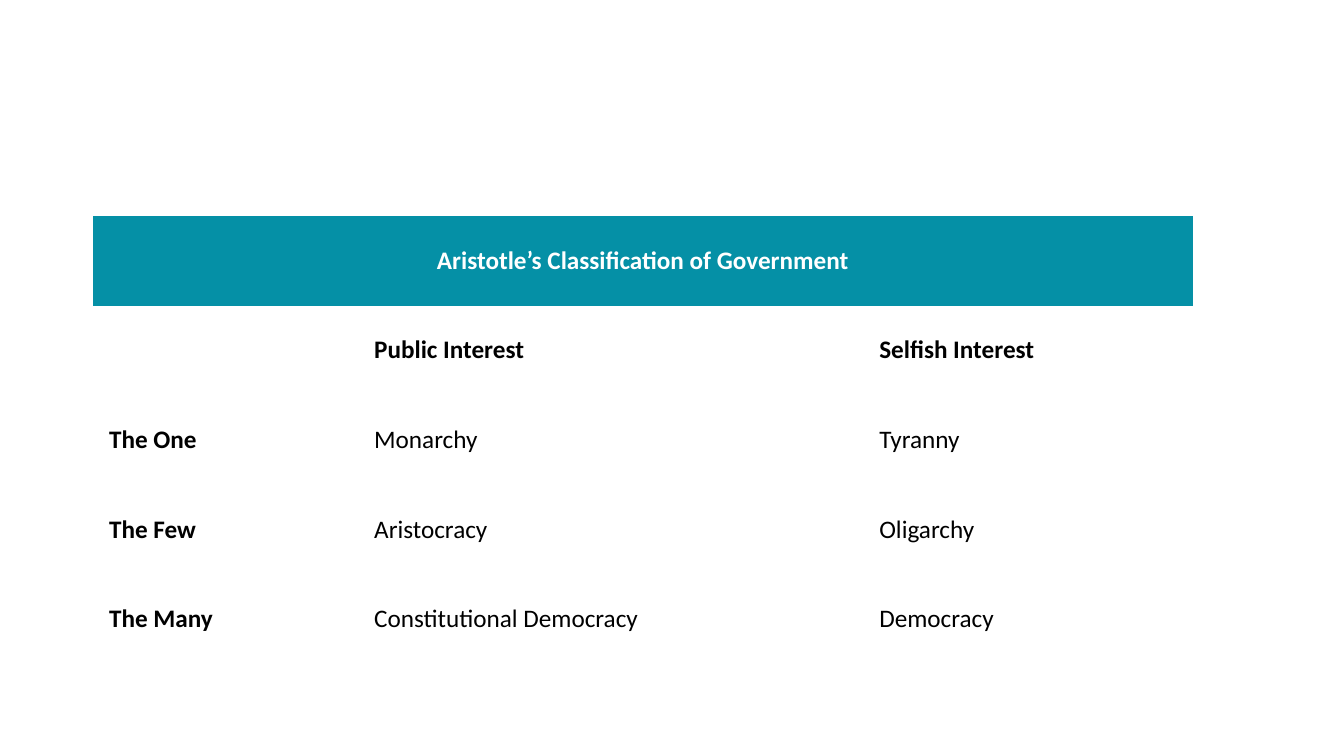
import pptx
import pptx.util
import pptx.dml.color
import pptx.enum.text
from pptx.util import Cm, Pt
from pptx.dml.color import RGBColor
from pptx.enum.text import MSO_ANCHOR, PP_ALIGN

TITLE = "Aristotle’s Classification of Government"
ROWS = [
    ("", "Public Interest", "Selfish Interest"),
    ("The One", "Monarchy", "Tyranny"),
    ("The Few", "Aristocracy", "Oligarchy"),
    ("The Many", "Constitutional Democracy", "Democracy"),
]

TEAL = RGBColor(0x05, 0x90, 0xA6)
WHITE = RGBColor(0xFF, 0xFF, 0xFF)
BLACK = RGBColor(0x00, 0x00, 0x00)
FONT, SIZE = "Calibri", Pt(18)
LEFT, TOP = Cm(2.34), Cm(5.44)
COL_WIDTHS = [Cm(6.68), Cm(12.73), Cm(8.31)]
ROW_HEIGHT = Cm(2.26)
MARGIN_X, MARGIN_Y = Cm(0.41), Cm(0.25)
NO_STYLE = "{2D5ABB26-0587-4C30-8999-92F81FD0307C}"


def write_cell(cell, text, color, bold, align=PP_ALIGN.LEFT):
    cell.vertical_anchor = MSO_ANCHOR.MIDDLE
    cell.margin_left = cell.margin_right = MARGIN_X
    cell.margin_top = cell.margin_bottom = MARGIN_Y
    if not text:
        return
    p = cell.text_frame.paragraphs[0]
    p.alignment = align
    r = p.add_run()
    r.text = text
    r.font.name = FONT
    r.font.size = SIZE
    r.font.bold = bold
    r.font.color.rgb = color


def main():
    prs = pptx.Presentation()
    prs.slide_width, prs.slide_height = Cm(33.87), Cm(19.05)
    s = prs.slides.add_slide(prs.slide_layouts[6])

    n_rows, n_cols = len(ROWS) + 1, len(COL_WIDTHS)
    frame = s.shapes.add_table(n_rows, n_cols, LEFT, TOP,
                               sum(COL_WIDTHS), ROW_HEIGHT * n_rows)
    table = frame.table
    table.horz_banding = False
    style = frame._element.find(".//" + pptx.oxml.ns.qn("a:tableStyleId"))
    style.text = NO_STYLE
    for column, width in zip(table.columns, COL_WIDTHS):
        column.width = width
    for row in table.rows:
        row.height = ROW_HEIGHT

    header = table.cell(0, 0)
    header.merge(table.cell(0, n_cols - 1))
    header.fill.solid()
    header.fill.fore_color.rgb = TEAL
    write_cell(header, TITLE, WHITE, True, PP_ALIGN.CENTER)

    for i, row in enumerate(ROWS):
        for j, text in enumerate(row):
            cell = table.cell(i + 1, j)
            cell.fill.background()
            write_cell(cell, text, BLACK, bold=i == 0 or j == 0)

    prs.save("out.pptx")


if __name__ == "__main__":
    main()
